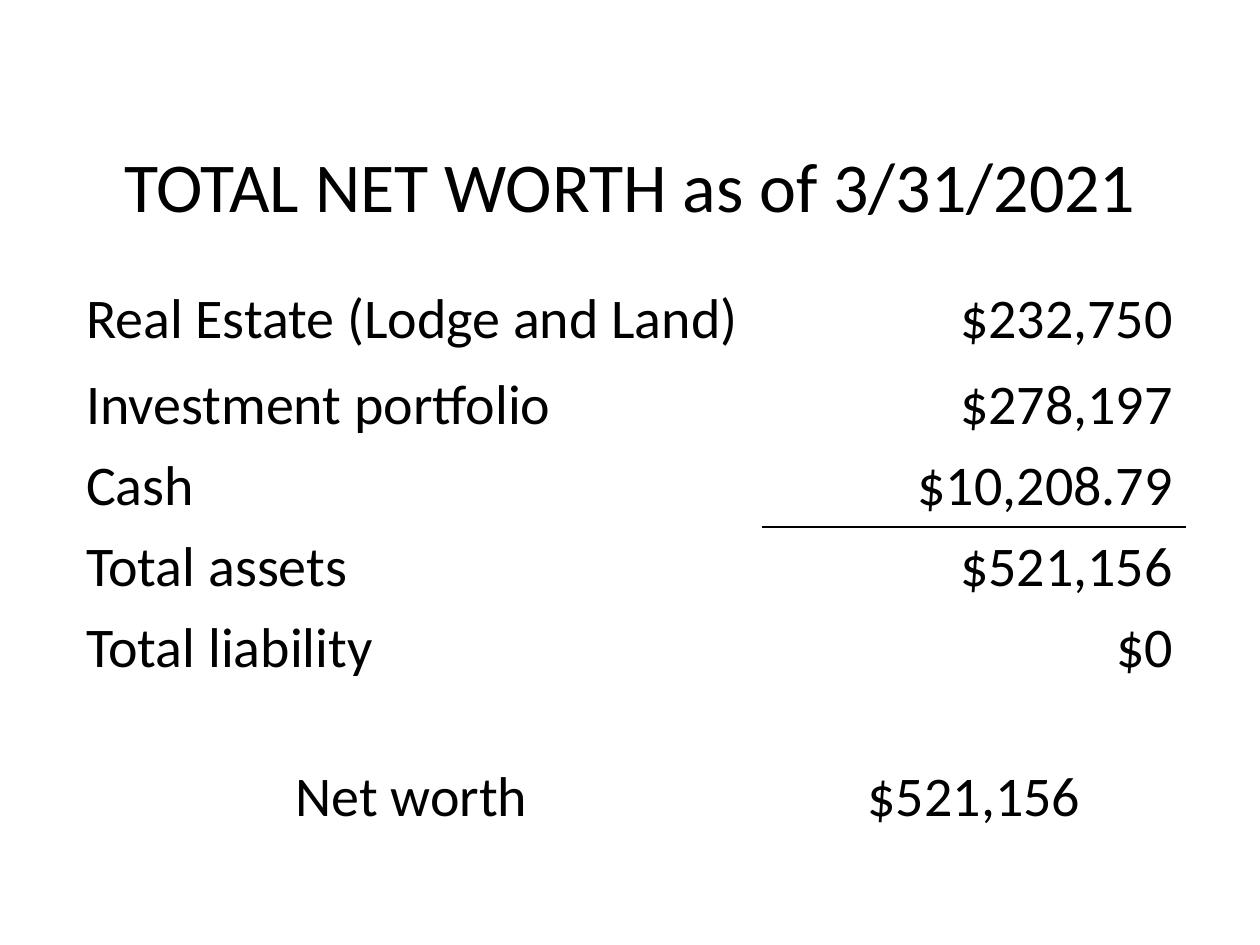
import dataclasses

import lxml.etree
import pptx
import pptx.dml.color
import pptx.enum.text
import pptx.oxml.ns
import pptx.util

Cm = pptx.util.Cm
Pt = pptx.util.Pt
ALIGN = pptx.enum.text.PP_ALIGN
MIDDLE = pptx.enum.text.MSO_ANCHOR.MIDDLE


@dataclasses.dataclass(frozen=True)
class Theme:
    """Colours, font and type sizes of the slide."""

    ink: str = "000000"
    font: str = "Calibri"
    title_size: int = 40
    body_size: int = 32
    rule_width: int = 1


THEME = Theme()
TITLE = "TOTAL NET WORTH as of 3/31/2021"
ENTRIES = [
    ("Real Estate (Lodge and Land)", "$232,750"),
    ("Investment portfolio", "$278,197"),
    ("Cash", "$10,208.79"),
    ("Total assets", "$521,156"),
    ("Total liability", "$0"),
    ("Net worth ", "$521,156"),
]
LAST_ASSET_ROW = 2
COLUMN_WIDTHS = (13.89, 8.53)
ROW_HEIGHTS = (1.85, 1.63, 1.63, 1.63, 1.63, 4.38)


def write_text(text_frame, text, size, alignment):
    """Write one styled paragraph into a text frame."""
    paragraph = text_frame.paragraphs[0]
    paragraph.text = text
    paragraph.alignment = alignment
    paragraph.font.name = THEME.font
    paragraph.font.size = Pt(size)
    paragraph.font.color.rgb = pptx.dml.color.RGBColor.from_string(THEME.ink)


def add_border(cell, side):
    """Draw a solid line on one side of a cell, given as 'T' or 'B'."""
    qn = pptx.oxml.ns.qn
    properties = cell._tc.get_or_add_tcPr()
    line = lxml.etree.Element(qn(f"a:ln{side}"), w=str(Pt(THEME.rule_width)))
    fill = lxml.etree.SubElement(line, qn("a:solidFill"))
    lxml.etree.SubElement(fill, qn("a:srgbClr"), val=THEME.ink)
    properties.insert(0, line)


def add_title(slide, left, top, width, height):
    """Place the centred slide title in the given box."""
    box = slide.shapes.add_textbox(left, top, width, height)
    box.text_frame.word_wrap = True
    box.text_frame.vertical_anchor = MIDDLE
    write_text(box.text_frame, TITLE, THEME.title_size, ALIGN.CENTER)


def add_net_worth_table(slide, left, top):
    """Place the table of assets, liability and net worth."""
    width, height = Cm(sum(COLUMN_WIDTHS)), Cm(sum(ROW_HEIGHTS))
    frame = slide.shapes.add_table(len(ENTRIES), 2, left, top, width, height)
    table = frame.table
    table.first_row = False
    table.horz_banding = False
    for column, column_width in zip(table.columns, COLUMN_WIDTHS):
        column.width = Cm(column_width)
    for row_index, entry in enumerate(ENTRIES):
        table.rows[row_index].height = Cm(ROW_HEIGHTS[row_index])
        is_net_worth = row_index == len(ENTRIES) - 1
        for column_index, text in enumerate(entry):
            cell = table.cell(row_index, column_index)
            cell.fill.background()
            cell.vertical_anchor = MIDDLE
            side = (ALIGN.LEFT, ALIGN.RIGHT)[column_index]
            alignment = ALIGN.CENTER if is_net_worth else side
            write_text(cell.text_frame, text, THEME.body_size, alignment)
    add_border(table.cell(LAST_ASSET_ROW, 1), "B")
    add_border(table.cell(LAST_ASSET_ROW + 1, 1), "T")


def main():
    """Build and save the net worth slide."""
    presentation = pptx.Presentation()
    presentation.slide_width = Cm(25.4)
    presentation.slide_height = Cm(19.05)
    slide = presentation.slides.add_slide(presentation.slide_layouts[6])
    add_title(slide, Cm(1.9), Cm(2.13), Cm(21.6), Cm(3.18))
    add_net_worth_table(slide, Cm(1.48), Cm(5.51))
    presentation.save("out.pptx")


if __name__ == "__main__":
    main()
